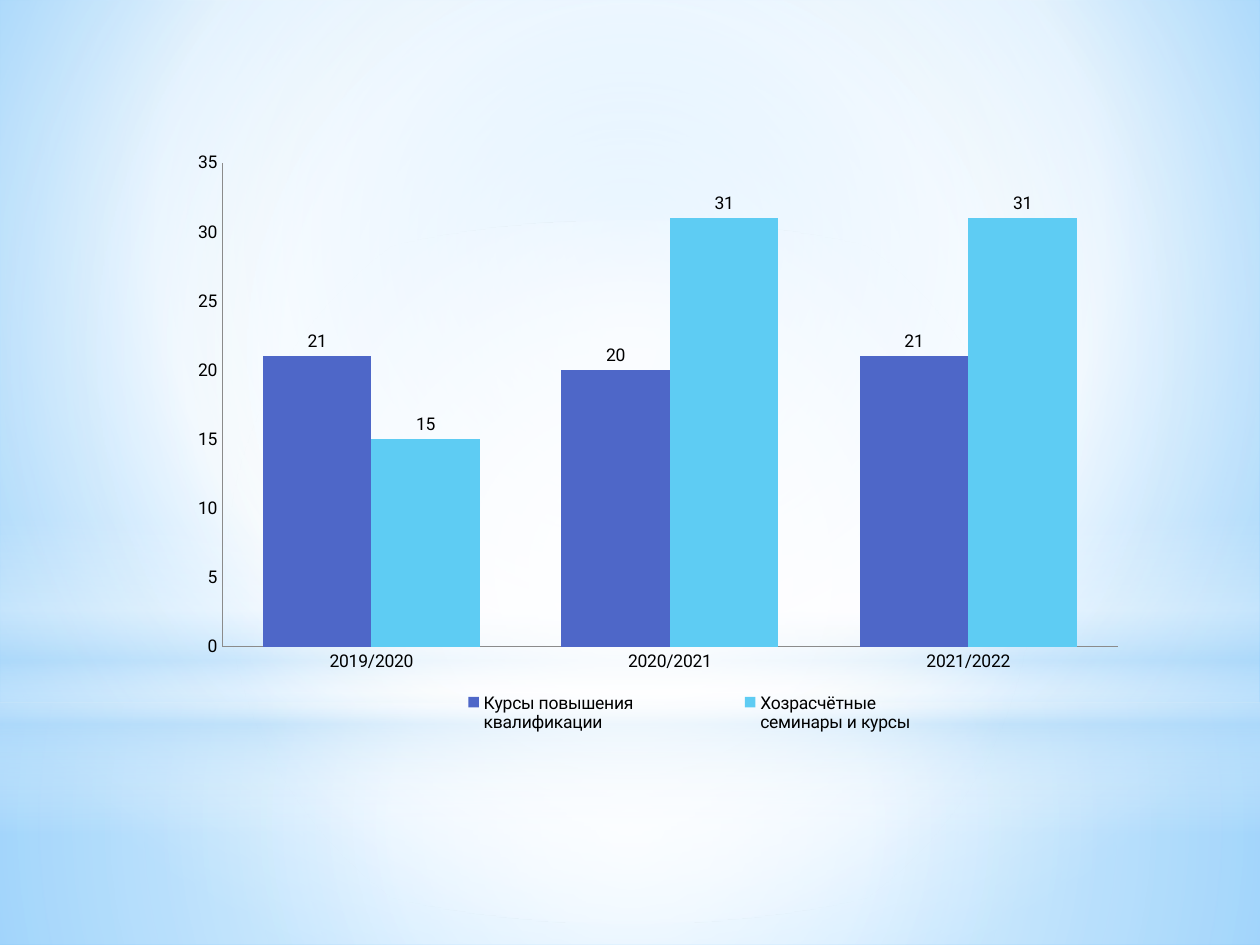
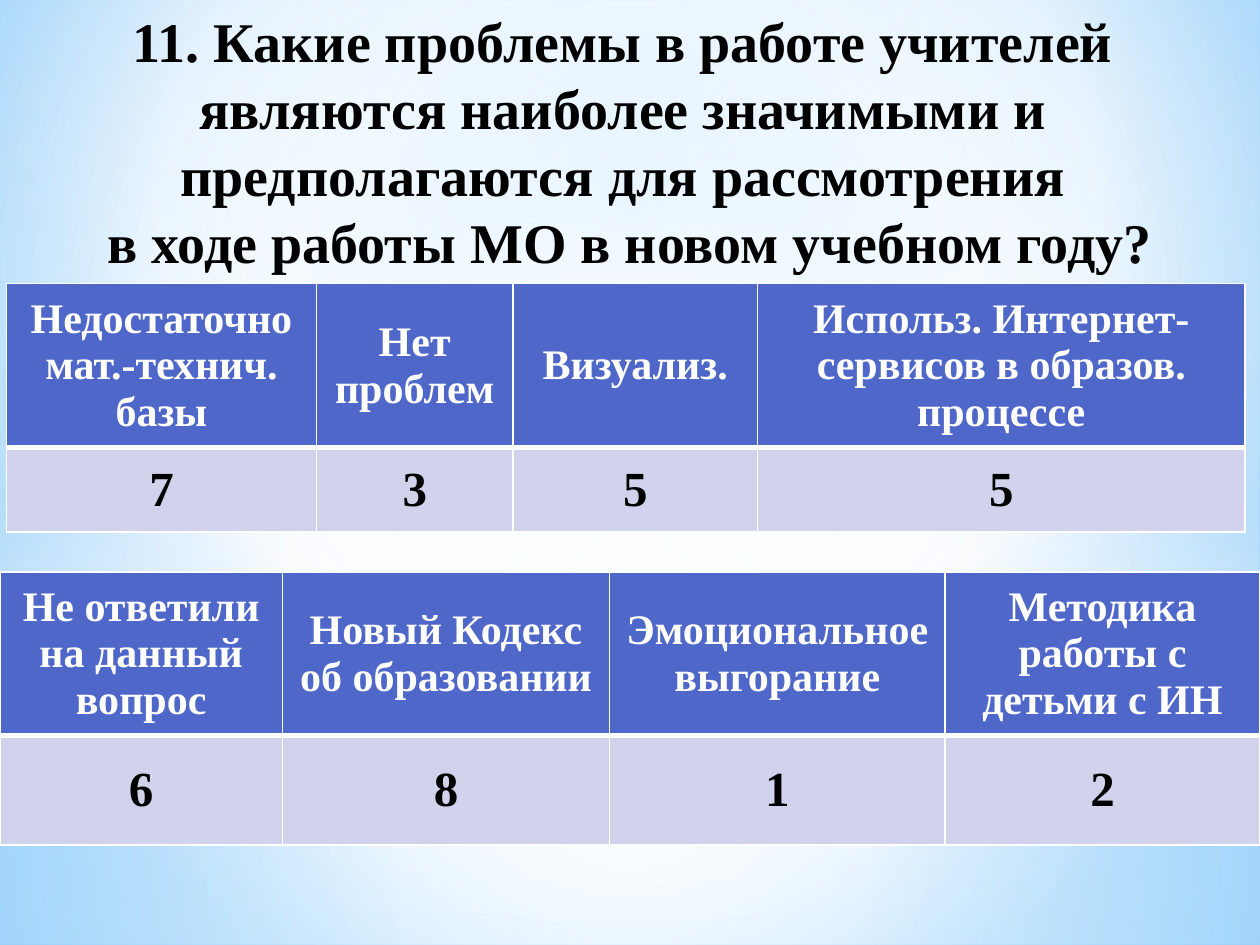
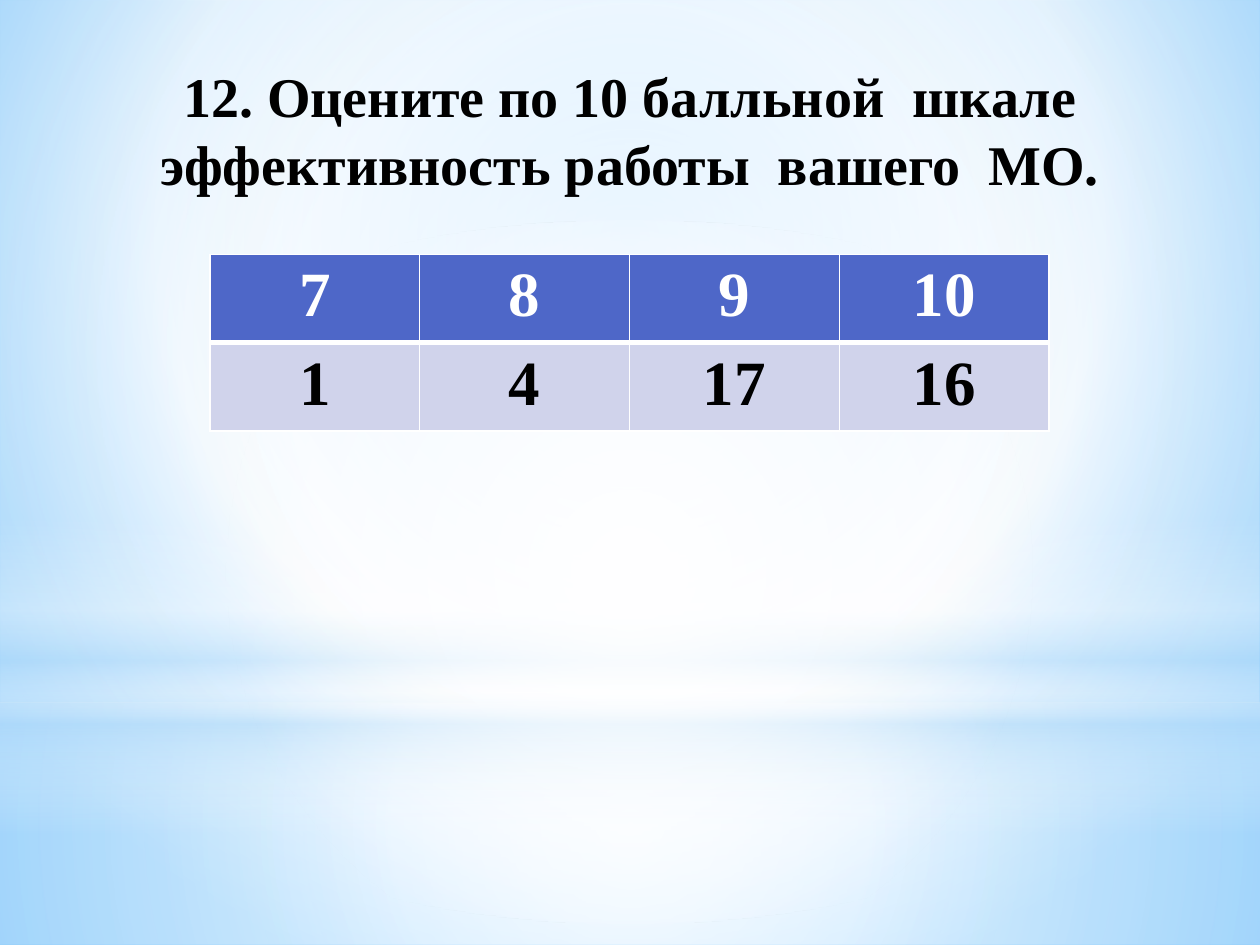
import lxml.etree
import pptx
import pptx.chart.data
import pptx.dml.color
import pptx.enum.chart
import pptx.enum.shapes
import pptx.enum.text
import pptx.oxml
import pptx.oxml.ns
import pptx.util

Cm = pptx.util.Cm
Pt = pptx.util.Pt
RGBColor = pptx.dml.color.RGBColor
qn = pptx.oxml.ns.qn

BLACK = RGBColor(0x00, 0x00, 0x00)
WHITE = RGBColor(0xFF, 0xFF, 0xFF)
INDIGO = RGBColor(0x4E, 0x67, 0xC8)
CYAN = RGBColor(0x5E, 0xCC, 0xF3)
LAVENDER = RGBColor(0xD0, 0xD3, 0xEB)
MIST = RGBColor(0xB4, 0xDC, 0xFA)
SKY = RGBColor(0x9E, 0xD5, 0xFF)
AZURE = RGBColor(0x5B, 0xB9, 0xFF)
AXIS_GRAY = RGBColor(0x8B, 0x8B, 0x8B)
CHART_FONT = "Roboto"
TEXT_FONT = "Times New Roman"
CENTER = (50, 50, 50, 50)


def paint_gradient(element, stops, focus):
    solid = element.find(".//" + qn("a:solidFill"))
    gradient = lxml.etree.Element(qn("a:gradFill"), rotWithShape="1")
    stop_list = lxml.etree.SubElement(gradient, qn("a:gsLst"))
    for position, color, opacity in stops:
        stop = lxml.etree.SubElement(stop_list, qn("a:gs"), pos=str(position * 1000))
        tint = lxml.etree.SubElement(stop, qn("a:srgbClr"), val=str(color))
        if opacity < 100:
            lxml.etree.SubElement(tint, qn("a:alpha"), val=str(opacity * 1000))
    if focus:
        direction = lxml.etree.SubElement(gradient, qn("a:path"))
        direction.set("path", "circle")
        rectangle = lxml.etree.SubElement(direction, qn("a:fillToRect"))
        for side, inset in zip("ltrb", focus):
            rectangle.set(side, str(inset * 1000))
    else:
        lxml.etree.SubElement(gradient, qn("a:lin"), ang="5400000", scaled="0")
    solid.getparent().replace(solid, gradient)


def set_chart_layout(element, index, target, box):
    for layout in element.findall(qn("c:layout")):
        element.remove(layout)
    layout = lxml.etree.Element(qn("c:layout"))
    manual = lxml.etree.SubElement(layout, qn("c:manualLayout"))
    if target:
        lxml.etree.SubElement(manual, qn("c:layoutTarget"), val=target)
    for name in ("xMode", "yMode"):
        lxml.etree.SubElement(manual, qn("c:" + name), val="edge")
    for name, value in zip("xywh", box):
        lxml.etree.SubElement(manual, qn("c:" + name), val=str(value))
    element.insert(index, layout)


presentation = pptx.Presentation()
presentation.slide_width = Cm(25.4)
presentation.slide_height = Cm(19.05)
master = presentation.slide_master
chart_slide = presentation.slides.add_slide(presentation.slide_layouts[6])

master.background.fill.solid()
paint_gradient(master.element, [(0, SKY, 100), (60, WHITE, 100), (100, AZURE, 100)], (20, 10, 20, 60))

RECTANGLE = pptx.enum.shapes.MSO_SHAPE.RECTANGLE
OVAL = pptx.enum.shapes.MSO_SHAPE.OVAL
master_glows = [
    (RECTANGLE, 14.17, 4.88, [(0, WHITE, 91), (37, WHITE, 76), (100, MIST, 79)], CENTER),
    (RECTANGLE, 0, 14.17, [(0, WHITE, 89), (48, WHITE, 62), (100, MIST, 79)], CENTER),
    (RECTANGLE, 10.46, 6.35, [(0, WHITE, 0), (29, WHITE, 30), (45, MIST, 40),
                              (55, WHITE, 26), (65, MIST, 60), (100, WHITE, 0)], None),
    (OVAL, 4.45, 14.17, [(0, WHITE, 100), (56, WHITE, 0)], CENTER),
]
for index, (kind, top, height, stops, focus) in enumerate(master_glows):
    glow = chart_slide.shapes.add_shape(kind, Cm(0), Cm(top), Cm(25.4), Cm(height))
    glow.shadow.inherit = False
    glow.line.fill.background()
    glow.fill.solid()
    glow.fill.fore_color.rgb = WHITE
    paint_gradient(glow.element, stops, focus)
    glow.element.nvSpPr.cNvPr.set("id", str(100 + index))
    master.shapes.element.insert(2 + index, glow.element)

chart_data = pptx.chart.data.CategoryChartData()
chart_data.categories = ["2019/2020", "2020/2021", "2021/2022"]
chart_data.add_series("Курсы повышения \nквалификации", [21, 20, 21])
chart_data.add_series("Хозрасчётные \nсеминары и курсы", [15, 31, 31])
chart = chart_slide.shapes.add_chart(
    pptx.enum.chart.XL_CHART_TYPE.COLUMN_CLUSTERED,
    Cm(3.51), Cm(2.92), Cm(19.41), Cm(12.19), chart_data).chart
chart.has_title = False
chart.font.name = CHART_FONT
chart.font.size = Pt(10)
chart.font.color.rgb = BLACK

for axis in (chart.category_axis, chart.value_axis):
    axis.has_major_gridlines = False
    axis.major_tick_mark = pptx.enum.chart.XL_TICK_MARK.NONE
    axis.minor_tick_mark = pptx.enum.chart.XL_TICK_MARK.NONE
    axis.format.line.color.rgb = AXIS_GRAY
    axis.format.line.width = Pt(0.75)
chart.value_axis.minimum_scale = 0
chart.value_axis.maximum_scale = 35
chart.value_axis.major_unit = 5

plot = chart.plots[0]
plot.gap_width = 75
plot.vary_by_categories = False
for series, color in zip(plot.series, (INDIGO, CYAN)):
    series.format.fill.solid()
    series.format.fill.fore_color.rgb = color
    series.data_labels.show_value = True
    series.data_labels.position = pptx.enum.chart.XL_LABEL_POSITION.OUTSIDE_END

chart.has_legend = True
chart.legend.position = pptx.enum.chart.XL_LEGEND_POSITION.BOTTOM
chart.legend.include_in_layout = False
set_chart_layout(chart.element.find(".//" + qn("c:plotArea")), 0, "inner", (0.05, 0.03, 0.93, 0.8))
set_chart_layout(chart.element.find(".//" + qn("c:legend")), 1, None, (0.2, 0.9, 0.67, 0.08))

MIDDLE = pptx.enum.text.MSO_ANCHOR.MIDDLE
TOP = pptx.enum.text.MSO_ANCHOR.TOP
question_slides = [
    {
        "title": ["11. Какие проблемы в работе учителей ", "являются наиболее значимыми и ",
                  "предполагаются для рассмотрения ", "в ходе работы МО в новом учебном году?"],
        "title_top": 0, "title_height": 7.09, "anchor": MIDDLE, "sizes": (24, 28),
        "tables": [
            (0.13, 5.72, (6.25, 3.96, 4.93, 9.83), (3.3, 1.7),
             [["Недостаточно мат.-технич. базы", "Нет проблем", "Визуализ.",
               "Использ. Интернет-сервисов в образов. процессе"], ["7", "3", "5", "5"]]),
            (0, 11.53, (5.69, 6.6, 6.76, 6.35), (3.3, 2.2),
             [["Не ответили на данный вопрос", "Новый Кодекс об образовании",
               "Эмоциональное выгорание", "Методика работы с детьми с ИН"], ["6", "8", "1", "2"]]),
        ],
    },
    {
        "title": ["12. Оцените по 10 балльной  шкале эффективность работы  вашего  МО."],
        "title_top": 1.12, "title_height": 3, "anchor": TOP, "sizes": (36, 36),
        "tables": [
            (4.23, 5.13, (4.23,) * 4, (1.78, 1.78), [["7", "8", "9", "10"], ["1", "4", "17", "16"]]),
        ],
    },
]

for question in question_slides:
    slide = presentation.slides.add_slide(presentation.slide_layouts[5])
    title = slide.shapes.title
    title.left, title.top = Cm(0), Cm(question["title_top"])
    title.width, title.height = Cm(25.4), Cm(question["title_height"])
    frame = title.text_frame
    frame.word_wrap = True
    frame.auto_size = pptx.enum.text.MSO_AUTO_SIZE.NONE
    frame.vertical_anchor = TOP
    for index, line in enumerate(question["title"]):
        paragraph = frame.add_paragraph() if index else frame.paragraphs[0]
        paragraph.alignment = pptx.enum.text.PP_ALIGN.CENTER
        paragraph.line_spacing = 1.0
        paragraph.space_before = Pt(0)
        run = paragraph.add_run()
        run.text = line
        run.font.name = TEXT_FONT
        run.font.size = Pt(32)
        run.font.bold = True
        run.font.color.rgb = BLACK

    for left, top, widths, heights, rows in question["tables"]:
        table = slide.shapes.add_table(
            len(rows), len(widths), Cm(left), Cm(top), Cm(sum(widths)), Cm(sum(heights))).table
        for column, width in zip(table.columns, widths):
            column.width = Cm(width)
        row_styles = zip(rows, heights, question["sizes"], (INDIGO, LAVENDER), (WHITE, BLACK), ("a:lnB", "a:lnT"))
        for row_index, (texts, height, size, fill_color, text_color, divider) in enumerate(row_styles):
            table.rows[row_index].height = Cm(height)
            for column_index, text in enumerate(texts):
                cell = table.cell(row_index, column_index)
                cell.vertical_anchor = question["anchor"]
                cell.fill.solid()
                cell.fill.fore_color.rgb = fill_color
                border = lxml.etree.Element(qn(divider), w=str(Pt(3)))
                border_fill = lxml.etree.SubElement(border, qn("a:solidFill"))
                lxml.etree.SubElement(border_fill, qn("a:srgbClr"), val=str(WHITE))
                cell._tc.get_or_add_tcPr().insert(0, border)
                paragraph = cell.text_frame.paragraphs[0]
                paragraph.alignment = pptx.enum.text.PP_ALIGN.CENTER
                run = paragraph.add_run()
                run.text = text
                run.font.name = TEXT_FONT
                run.font.size = Pt(size)
                run.font.bold = True
                run.font.color.rgb = text_color

presentation.save("out.pptx")
